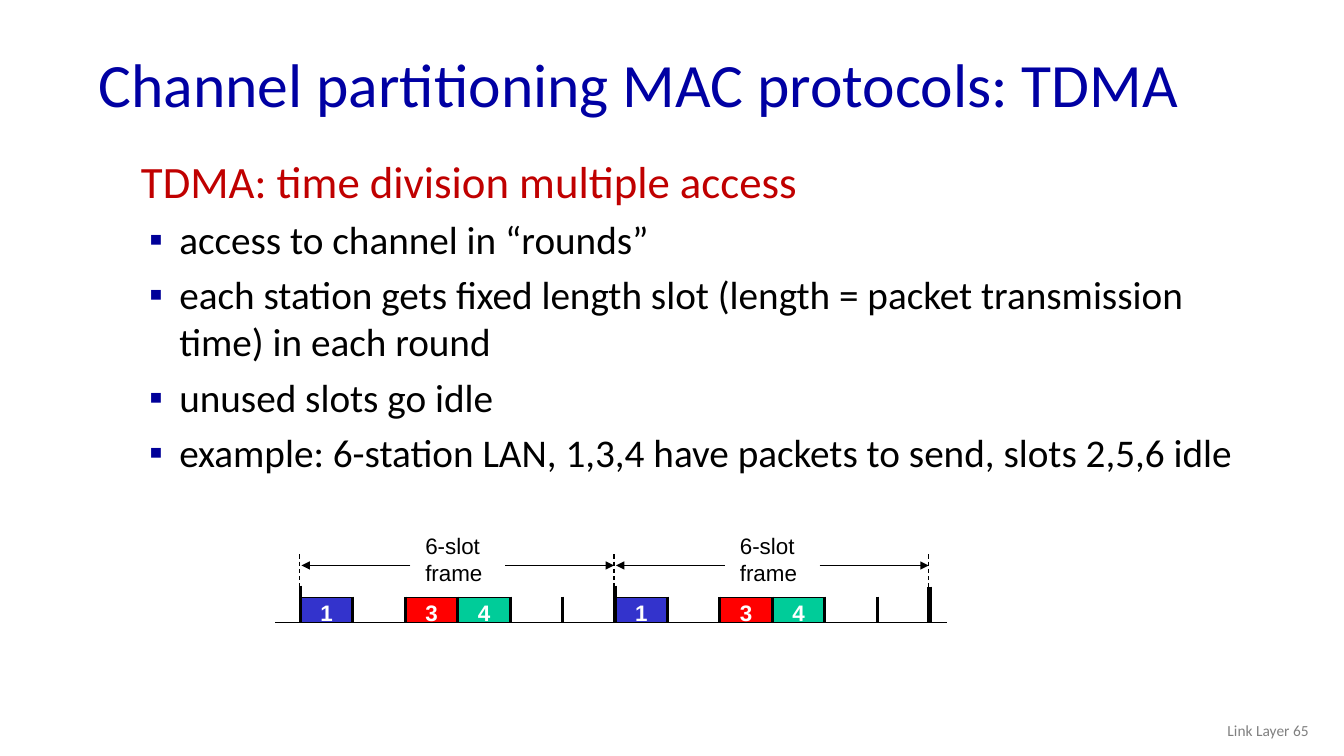
from lxml import etree
from pptx import Presentation
from pptx.dml.color import RGBColor
from pptx.enum.dml import MSO_LINE
from pptx.enum.shapes import MSO_CONNECTOR, MSO_SHAPE
from pptx.enum.text import MSO_ANCHOR, MSO_AUTO_SIZE, PP_ALIGN
from pptx.oxml.ns import qn
from pptx.util import Inches, Pt

STRAIGHT = MSO_CONNECTOR.STRAIGHT
RECTANGLE = MSO_SHAPE.RECTANGLE
DASH = MSO_LINE.DASH
TOP, MIDDLE = MSO_ANCHOR.TOP, MSO_ANCHOR.MIDDLE
FIT_SHAPE = MSO_AUTO_SIZE.SHAPE_TO_FIT_TEXT
LEFT, RIGHT = PP_ALIGN.LEFT, PP_ALIGN.RIGHT

COLORS = {
    "title": "0000A3", "heading": "C00000", "bullet": "000099",
    "ink": "000000", "footer": "808080", "white": "FFFFFF",
    "station 1": "3333CC", "station 3": "FF0000", "station 4": "00CC99",
}
BULLETS = [
    "access to channel in “rounds”",
    "each station gets fixed length slot (length = packet transmission time) in each round",
    "unused slots go idle",
    "example: 6-station LAN, 1,3,4 have packets to send, slots 2,5,6 idle",
]
SENDERS = (1, 3, 4)
SLOTS = 6
SLOT_WIDTH = 0.52
FRAME_WIDTH = SLOTS * SLOT_WIDTH
FRAME_STARTS = (2.98, 2.98 + FRAME_WIDTH)
END = FRAME_STARTS[-1] + FRAME_WIDTH
SLOT_TOP, BASELINE = 5.93, 6.18
ARROW_Y = 5.61


def rgb(name):
    return RGBColor.from_string(COLORS[name])


def write(paragraph, text, size=16, font="Calibri", color="ink", bold=False,
          align=LEFT, spacing=1.0, before=0, indent=None, bullet=None):
    paragraph.alignment = align
    paragraph.line_spacing = spacing
    paragraph.space_before = Pt(before)
    properties = paragraph._p.get_or_add_pPr()
    if indent:
        margin, first_line = indent
        properties.set("marL", str(Inches(margin)))
        properties.set("indent", str(Inches(first_line)))
    if bullet:
        bullet_color = etree.SubElement(properties, qn("a:buClr"))
        etree.SubElement(bullet_color, qn("a:srgbClr"), val=COLORS["bullet"])
        etree.SubElement(properties, qn("a:buFont"), typeface="Arial")
        etree.SubElement(properties, qn("a:buChar"), char=bullet)
    run = paragraph.add_run()
    run.text = text
    run.font.size = Pt(size)
    run.font.name = font
    run.font.bold = bold
    run.font.color.rgb = rgb(color)


class SlideBuilder:
    def __init__(self, slide):
        self.shapes = slide.shapes

    def text(self, left, top, width, height, paragraphs, anchor=TOP, wrap=True):
        frame = self.shapes.add_textbox(
            Inches(left), Inches(top), Inches(width), Inches(height)).text_frame
        frame.word_wrap = wrap
        frame.vertical_anchor = anchor
        if not wrap:
            frame.auto_size = FIT_SHAPE
        for index, (words, style) in enumerate(paragraphs):
            paragraph = frame.add_paragraph() if index else frame.paragraphs[0]
            write(paragraph, words, **style)

    def line(self, x1, y1, x2, y2, weight=0.75, dash=None, arrow=False):
        connector = self.shapes.add_connector(
            STRAIGHT, Inches(x1), Inches(y1), Inches(x2), Inches(y2))
        connector.line.color.rgb = rgb("ink")
        connector.line.width = Pt(weight)
        if dash:
            connector.line.dash_style = dash
        if arrow:
            etree.SubElement(connector.line._get_or_add_ln(),
                             qn("a:tailEnd"), type="triangle")
        etree.SubElement(connector._element.spPr, qn("a:effectLst"))

    def slot(self, left, station):
        box = self.shapes.add_shape(
            RECTANGLE, Inches(left), Inches(SLOT_TOP),
            Inches(SLOT_WIDTH), Inches(BASELINE - SLOT_TOP))
        box.shadow.inherit = False
        box.fill.solid()
        box.fill.fore_color.rgb = rgb(f"station {station}")
        box.line.color.rgb = rgb("ink")
        box.line.width = Pt(0.75)
        number = dict(font="Arial", color="white", bold=True)
        self.text(left + 0.1, 5.89, 0.32, 0.37, [(str(station), number)], wrap=False)

    def frame(self, start):
        for station in SENDERS:
            self.slot(start + (station - 1) * SLOT_WIDTH, station)
        self.line(start, 5.81, start, BASELINE, 2.25)
        for boundary in range(1, SLOTS):
            x = start + boundary * SLOT_WIDTH
            self.line(x, 5.92, x, BASELINE, 2.25)
        label = dict(font="Arial")
        self.text(start + 1.14, 5.23, 0.77, 0.64,
                  [("6-slot", label), ("frame", label)], wrap=False)
        self.line(start + 1.09, ARROW_Y, start + 0.01, ARROW_Y, arrow=True)
        self.line(start + 2.03, ARROW_Y, start + FRAME_WIDTH - 0.01, ARROW_Y, arrow=True)


def main():
    presentation = Presentation()
    presentation.slide_width = Inches(13.33)
    presentation.slide_height = Inches(7.5)
    builder = SlideBuilder(presentation.slides.add_slide(presentation.slide_layouts[6]))

    title = dict(size=44, color="title", spacing=0.9)
    builder.text(0.88, 0.38, 11.5, 0.98,
                 [("Channel partitioning MAC protocols: TDMA", title)], anchor=MIDDLE)

    heading = dict(size=32, color="heading", spacing=0.75, indent=(0.38, -0.38))
    point = dict(size=28, before=6, indent=(0.38, -0.3), bullet="▪")
    builder.text(1.3, 1.6, 11.19, 3.2,
                 [("TDMA: time division multiple access", heading)]
                 + [(words, point) for words in BULLETS])

    builder.line(2.73, BASELINE, 9.39, BASELINE)
    for start in FRAME_STARTS:
        builder.frame(start)
    builder.line(END, 5.82, END, BASELINE, 3)
    for edge in (*FRAME_STARTS, END):
        builder.line(edge - 0.01, 5.5, edge - 0.01, 5.83, dash=DASH)

    footer = dict(size=11, color="footer", align=RIGHT)
    builder.text(10.08, 7.05, 3, 0.4, [("Link Layer 65", footer)], anchor=MIDDLE)
    presentation.save("out.pptx")


if __name__ == "__main__":
    main()
